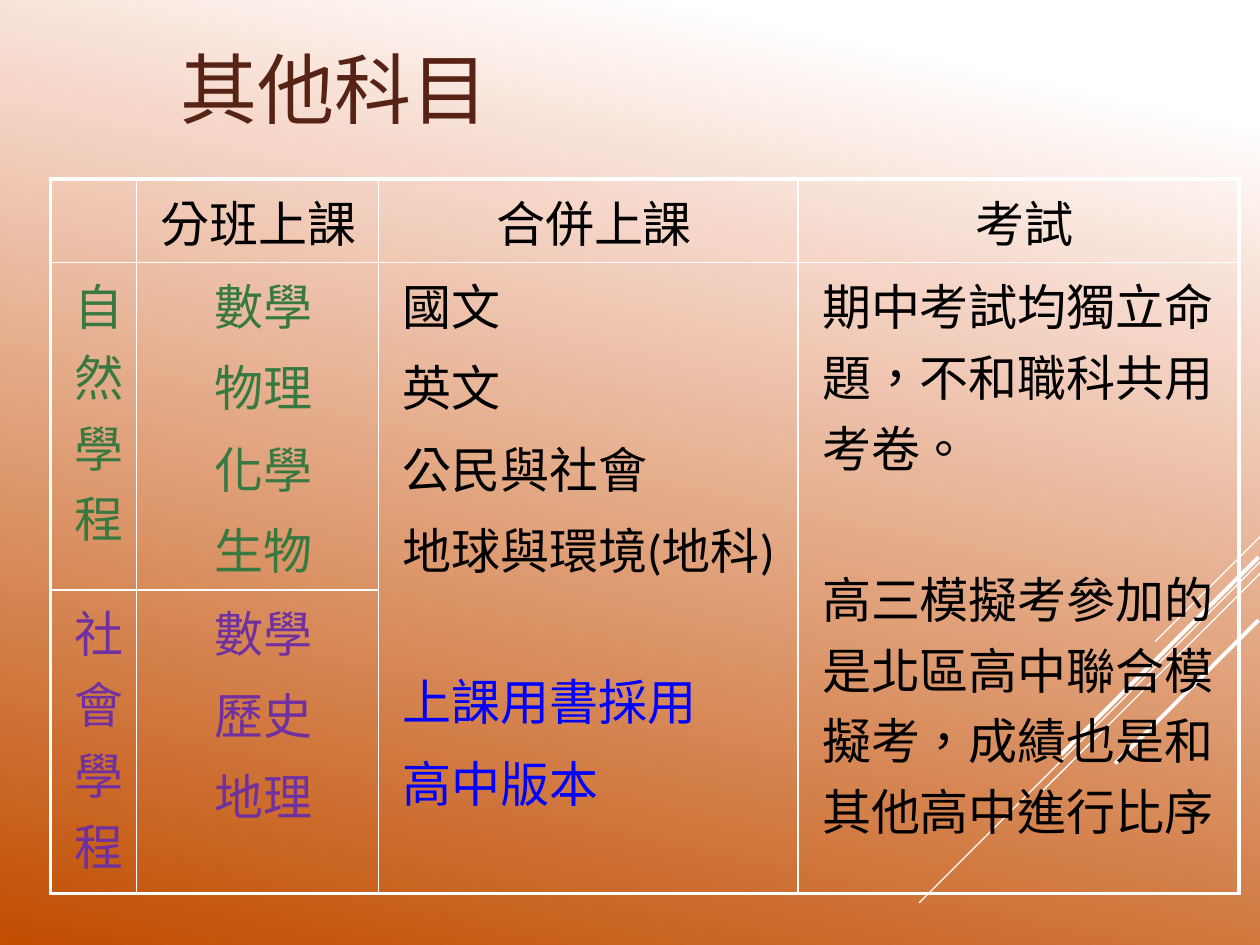
from dataclasses import dataclass
from itertools import product

from lxml.etree import SubElement
from pptx import Presentation
from pptx.dml.color import RGBColor
from pptx.enum.shapes import MSO_CONNECTOR
from pptx.enum.text import MSO_ANCHOR, PP_ALIGN
from pptx.oxml import parse_xml
from pptx.oxml.ns import nsdecls, qn
from pptx.util import Cm, Pt

COLORS = {
    "white": "FFFFFF", "peach": "F5D6C8", "rust": "C04D00", "brown": "572314",
    "black": "000000", "green": "387941", "purple": "7030A0", "blue": "0000FF",
}
CJK_FONT = "Noto Sans CJK SC"
BACKGROUND_STOPS = ((10, "white"), (29, "peach"), (100, "rust"))
BACKGROUND_ANGLE = 102
COLUMN_WIDTHS = (1.73, 4.88, 8.46, 8.89)
ROW_HEIGHTS = (1.63, 5.64, 5.44)
THIN, THICK = 1, 2.25
NORMAL_GAP, SECTION_GAP = 6, 46


@dataclass
class Diagonal:
    right: float
    top: float
    reach: float
    weight: float


@dataclass
class Entry:
    text: str
    color: str = "black"
    gap: float = NORMAL_GAP


@dataclass
class CellContent:
    row: int
    column: int
    entries: list[Entry]
    centered: bool = False


DIAGONALS = (
    Diagonal(25.4, 10.82, 2.11, 0.75),
    Diagonal(25.4, 11.33, 6.87, 0.75),
    Diagonal(25.4, 11.56, 4.37, 0.75),
    Diagonal(25.37, 11.23, 3.98, 2.25),
    Diagonal(25.37, 12.5, 2.89, 2.25),
)
CONTENTS = (
    CellContent(0, 1, [Entry("分班上課")]),
    CellContent(0, 2, [Entry("合併上課")], True),
    CellContent(0, 3, [Entry("考試")], True),
    CellContent(1, 0, [Entry("自然學程", "green")]),
    CellContent(1, 1, [Entry(name, "green") for name in ("數學", "物理", "化學", "生物")], True),
    CellContent(1, 2, [
        Entry("國文"),
        Entry("英文"),
        Entry("公民與社會"),
        Entry("地球與環境(地科)"),
        Entry("上課用書採用", "blue", SECTION_GAP),
        Entry("高中版本", "blue"),
    ]),
    CellContent(1, 3, [
        Entry("期中考試均獨立命題，不和職科共用考卷。"),
        Entry("高三模擬考參加的是北區高中聯合模擬考，成績也是和其他高中進行比序", gap=SECTION_GAP),
    ]),
    CellContent(2, 0, [Entry("社會學程", "purple")]),
    CellContent(2, 1, [Entry(name, "purple") for name in ("數學", "歷史", "地理")], True),
)


def add_span(paragraph, text: str, size: float, color: str, font: str) -> None:
    span = paragraph.add_run()
    span.text = text
    span.font.size = Pt(size)
    span.font.name = font
    span.font.color.rgb = RGBColor.from_string(COLORS[color])
    properties = span.font._element
    properties.set("lang", "zh-TW")
    SubElement(properties, qn("a:ea")).set("typeface", CJK_FONT)


def paint_background(page) -> None:
    fill = page.background.fill
    fill.gradient()
    gradient = page.background._cSld.find(".//" + qn("a:gradFill"))
    stops = "".join(
        f'<a:gs pos="{position * 1000}"><a:srgbClr val="{COLORS[color]}"/></a:gs>'
        for position, color in BACKGROUND_STOPS
    )
    gradient.replace(
        gradient.find(qn("a:gsLst")),
        parse_xml(f'<a:gsLst {nsdecls("a")}>{stops}</a:gsLst>'),
    )
    gradient.find(qn("a:lin")).set("ang", str(BACKGROUND_ANGLE * 60000))


def add_diagonal(page, diagonal: Diagonal) -> None:
    line = page.shapes.add_connector(
        MSO_CONNECTOR.STRAIGHT, Cm(diagonal.right), Cm(diagonal.top),
        Cm(diagonal.right - diagonal.reach), Cm(diagonal.top + diagonal.reach),
    )
    line.line.color.rgb = RGBColor.from_string(COLORS["white"])
    line.line.width = Pt(diagonal.weight)
    SubElement(line._element.spPr, qn("a:effectLst"))


def format_title(page) -> None:
    title = page.shapes.title
    title.left, title.top, title.width, title.height = Cm(3.38), Cm(0.64), Cm(19.23), Cm(2.11)
    frame = title.text_frame
    frame.vertical_anchor = MSO_ANCHOR.MIDDLE
    frame.margin_bottom = 0
    paragraph = frame.paragraphs[0]
    paragraph.alignment = PP_ALIGN.LEFT
    add_span(paragraph, "其他科目", 44, "brown", CJK_FONT)


def style_cell(cell, row: int, column: int) -> None:
    last_row = row + (cell.span_height if cell.is_merge_origin else 1) == len(ROW_HEIGHTS)
    outer_edges = {
        "L": column == 0,
        "R": column == len(COLUMN_WIDTHS) - 1,
        "T": row == 0,
        "B": last_row,
    }
    properties = cell._tc.get_or_add_tcPr()
    for side, outer in outer_edges.items():
        width = Pt(THICK if outer else THIN)
        properties.append(parse_xml(
            f'<a:ln{side} {nsdecls("a")} w="{width}"><a:solidFill>'
            f'<a:srgbClr val="{COLORS["white"]}"/></a:solidFill></a:ln{side}>'
        ))
    cell.fill.background()


def fill_cell(cell, content: CellContent) -> None:
    frame = cell.text_frame
    for index, entry in enumerate(content.entries):
        paragraph = frame.add_paragraph() if index else frame.paragraphs[0]
        paragraph.alignment = PP_ALIGN.CENTER if content.centered else PP_ALIGN.LEFT
        paragraph.space_before = Pt(entry.gap)
        properties = paragraph._p.get_or_add_pPr()
        properties.set("marL", str(Cm(0.23)))
        properties.set("indent", "0")
        add_span(paragraph, entry.text, 28, entry.color, "Calibri")


def add_course_table(page) -> None:
    table = page.shapes.add_table(
        len(ROW_HEIGHTS), len(COLUMN_WIDTHS), Cm(1.02), Cm(3.61),
        Cm(sum(COLUMN_WIDTHS)), Cm(sum(ROW_HEIGHTS)),
    ).table
    table.first_row = table.horz_banding = False
    for column, width in zip(table.columns, COLUMN_WIDTHS):
        column.width = Cm(width)
    for row, height in zip(table.rows, ROW_HEIGHTS):
        row.height = Cm(height)
    for column in (2, 3):
        table.cell(1, column).merge(table.cell(2, column))
    for row, column in product(range(len(ROW_HEIGHTS)), range(len(COLUMN_WIDTHS))):
        style_cell(table.cell(row, column), row, column)
    for content in CONTENTS:
        fill_cell(table.cell(content.row, content.column), content)


def main() -> None:
    """Build the slide on class arrangements for the other subjects."""
    deck = Presentation()
    deck.slide_width, deck.slide_height = Cm(25.4), Cm(19.05)
    page = deck.slides.add_slide(deck.slide_layouts[5])
    paint_background(page)
    for diagonal in DIAGONALS:
        add_diagonal(page, diagonal)
    format_title(page)
    add_course_table(page)
    deck.save("out.pptx")


if __name__ == "__main__":
    main()
